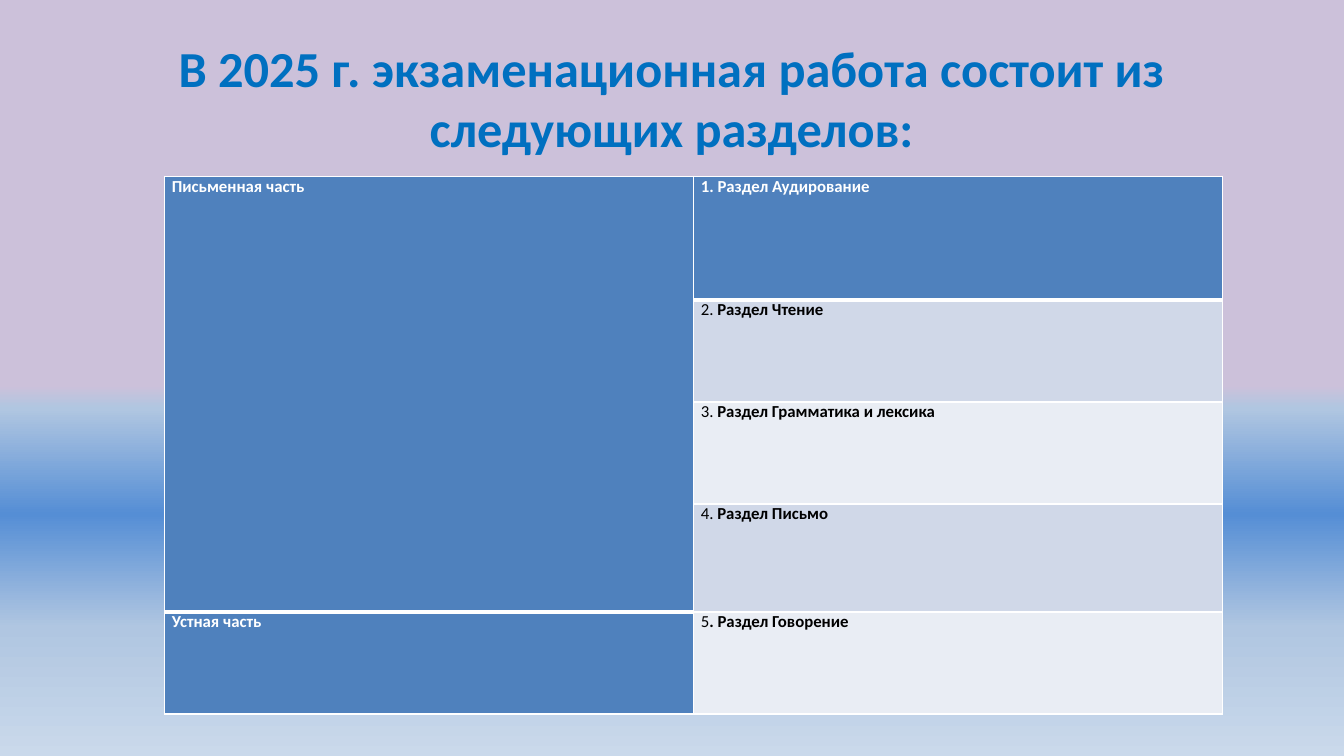
from lxml import etree
from pptx import Presentation
from pptx import util as u
from pptx.dml.color import RGBColor
from pptx.enum import text
from pptx.oxml import ns

BLUE, WHITE, BLACK = "4F81BD", "FFFFFF", "000000"
BANDS = ["D0D8E8", "E9EDF4"]
BACKGROUND = [(51, "CCC1DA"), (54, "B0C6E1"), (68, "558ED5"),
              (83, "B0C6E1"), (100, "CAD9EB")]
ROW_HEIGHTS = [3.12, 2.57, 2.57, 2.72, 2.57]
COLUMN_WIDTH = 13.33
JUSTIFY, LEFT = text.PP_ALIGN.JUSTIFY, text.PP_ALIGN.LEFT
# Number, section name, alignment
SECTIONS = [
    ("1. ", "Раздел Аудирование", JUSTIFY),
    ("2.", " Раздел Чтение", LEFT),
    ("3. ", "Раздел Грамматика и лексика", LEFT),
    ("4. ", "Раздел Письмо", LEFT),
    ("5", ". Раздел Говорение", JUSTIFY),
]


def color(hex_string):
    return RGBColor.from_string(hex_string)


def add_element(parent, tag, **attributes):
    return etree.SubElement(parent, ns.qn(tag), attributes)


def add_run(paragraph, content, *, size=12, hex_color=BLACK, bold=True, font="Calibri"):
    run = paragraph.add_run()
    run.text = content
    run.font.name = font
    run.font.size = u.Pt(size)
    run.font.bold = bold
    run.font.color.rgb = color(hex_color)


class SlideBuilder:
    def __init__(self, presentation):
        self.slide = presentation.slides.add_slide(presentation.slide_layouts[6])

    def gradient_background(self, stops):
        fill = self.slide.background.fill
        fill.gradient()
        fill.gradient_angle = 270
        stop_list = fill.gradient_stops[0]._gs.getparent()
        for old_stop in list(stop_list):
            stop_list.remove(old_stop)
        for position, hex_color in stops:
            stop = add_element(stop_list, "a:gs", pos=str(position * 1000))
            add_element(stop, "a:srgbClr", val=hex_color)

    def title(self, content, left, top, width, height):
        box = self.slide.shapes.add_textbox(*map(u.Cm, (left, top, width, height)))
        frame = box.text_frame
        frame.word_wrap = True
        frame.vertical_anchor = text.MSO_ANCHOR.MIDDLE
        paragraph = frame.paragraphs[0]
        paragraph.alignment = text.PP_ALIGN.CENTER
        add_run(paragraph, content, size=36, hex_color="0070C0")

    def table(self, left, top, column_widths, row_heights):
        frame = self.slide.shapes.add_table(
            len(row_heights), len(column_widths), u.Cm(left), u.Cm(top),
            u.Cm(sum(column_widths)), u.Cm(sum(row_heights)))
        table = frame.table
        for column, width in zip(table.columns, column_widths):
            column.width = u.Cm(width)
        for row, height in zip(table.rows, row_heights):
            row.height = u.Cm(height)
        return table

    def cell(self, cell, fill, top=1, bottom=1):
        cell.margin_left = cell.margin_right = u.Cm(0.18)
        cell.margin_top = cell.margin_bottom = 0
        properties = cell._tc.get_or_add_tcPr()
        for side, points in zip("LRTB", (1, 1, top, bottom)):
            line = add_element(properties, f"a:ln{side}", w=str(u.Pt(points)))
            add_element(add_element(line, "a:solidFill"), "a:srgbClr", val=WHITE)
        cell.fill.solid()
        cell.fill.fore_color.rgb = color(fill)

    def cell_text(self, cell, runs, alignment=JUSTIFY):
        paragraph = cell.text_frame.paragraphs[0]
        paragraph.alignment = alignment
        for content, style in runs:
            add_run(paragraph, content, **style)


def main():
    presentation = Presentation()
    presentation.slide_width = u.Cm(33.87)
    presentation.slide_height = u.Cm(19.05)
    builder = SlideBuilder(presentation)
    builder.gradient_background(BACKGROUND)

    # Heading
    builder.title("В 2025 г. экзаменационная работа состоит из следующих разделов:",
                  1.69, 0.86, 30.48, 3.18)

    # Exam parts on the left, their sections on the right
    table = builder.table(4.15, 4.44, [COLUMN_WIDTH] * 2, ROW_HEIGHTS)
    last = len(SECTIONS) - 1
    heading = {"hex_color": WHITE}
    for row, (number, name, alignment) in enumerate(SECTIONS):
        builder.cell(table.cell(row, 0), BLUE, top=3 if row == last else 1,
                     bottom=3 if row in (0, last - 1) else 1)
        section = table.cell(row, 1)
        if row == 0:
            builder.cell(section, BLUE, bottom=3)
            runs = [(number + name, heading)]
        else:
            builder.cell(section, BANDS[(row - 1) % 2], top=3 if row == 1 else 1)
            runs = [(number, {"bold": False}), (name, {})]
        builder.cell_text(section, runs, alignment)
    table.cell(0, 0).merge(table.cell(last - 1, 0))
    for row, part in ((0, "Письменная часть"), (last, "Устная часть")):
        builder.cell_text(table.cell(row, 0), [(part, heading)])

    presentation.save("out.pptx")


if __name__ == "__main__":
    main()
